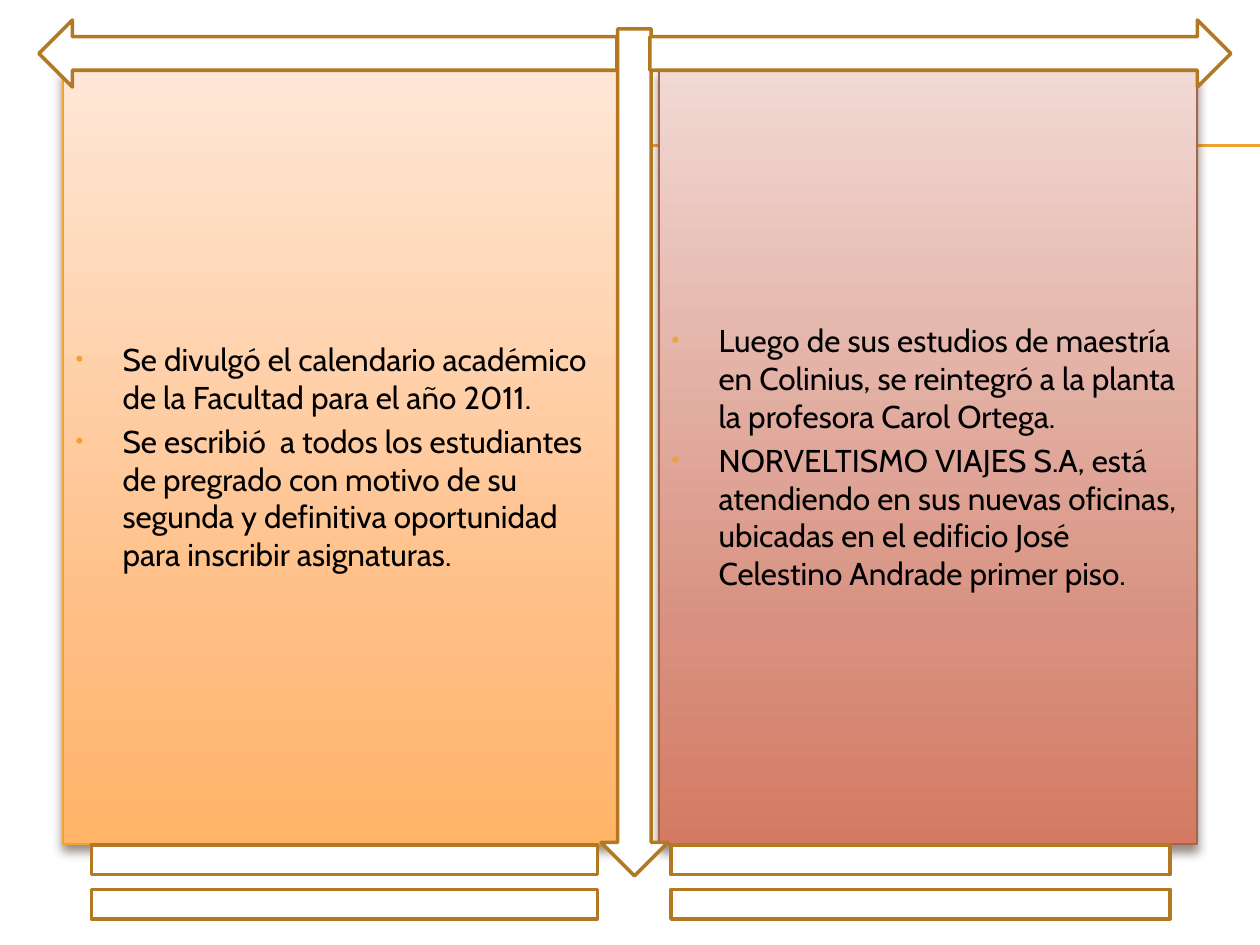
from copy import deepcopy

from lxml import etree
from pptx import Presentation
from pptx import util as u
from pptx.dml.color import RGBColor
from pptx.enum import shapes, text
from pptx.oxml import ns

GOLD = RGBColor(0xF0, 0xA2, 0x2E)
BROWN = RGBColor(0xB2, 0x78, 0x22)
RUST = RGBColor(0xA5, 0x64, 0x4E)
SHADE = RGBColor(0x4E, 0x3B, 0x30)
WHITE = RGBColor(0xFF, 0xFF, 0xFF)
BLACK = RGBColor(0, 0, 0)
PEACH = [RGBColor(0xFF, 0xE7, 0xD7), RGBColor(0xFF, 0xBE, 0x84), RGBColor(0xFF, 0xB4, 0x68)]
ROSE = [RGBColor(0xF1, 0xD9, 0xD4), RGBColor(0xD8, 0x91, 0x80), RGBColor(0xD4, 0x7A, 0x62)]
STOPS = [0, 0.72, 1]
PX = u.Inches(1) / 126


def add(root, tag, **attrs):
    """Append a DrawingML element."""
    node = etree.SubElement(root, ns.qn("a:" + tag))
    for key, val in attrs.items():
        node.set(key, str(val))
    return node


def write(para, words, size=18, font="Cabin", color=BLACK, dent=47, bullet=GOLD):
    """Fill a bulleted paragraph."""
    run = para.add_run()
    run.text = words
    run.font.size = u.Pt(size)
    run.font.name = font
    run.font.color.rgb = color
    para.alignment = text.PP_ALIGN.LEFT
    para.space_before = u.Pt(size * 0.2)
    props = para._p.get_or_add_pPr()
    props.set("marL", str(int(dent * PX)))
    props.set("indent", str(-int(dent * PX)))
    add(add(props, "buClr"), "srgbClr", val=bullet)
    add(props, "buSzPct", val=70000)
    add(props, "buFont", typeface="Arial")
    add(props, "buChar", char="•")


deck = Presentation()
deck.slide_width, deck.slide_height = u.Inches(10), u.Inches(7.5)
slide = deck.slides.add_slide(deck.slide_layouts[3])  # two content
title = slide.shapes.title
title.element.getparent().remove(title.element)
tree = slide.shapes

# Double rule, behind the panels
for row, y in enumerate([145, 146]):
    rule = tree.add_connector(shapes.MSO_CONNECTOR.STRAIGHT,
                              *[int(n * PX) for n in (71, y, 1260, y)])
    rule.line.color.rgb = GOLD
    rule.line.width = u.Pt(0.75)
    add(rule._element.spPr, "effectLst")
    tree._spTree.insert(2 + row, rule._element)

# News panels
panels = [
    (63, 557, PEACH, GOLD, [
        "Se divulgó el calendario académico de la Facultad para el año 2011.",
        "Se escribió  a todos los estudiantes de pregrado con motivo de su segunda "
        "y definitiva oportunidad para inscribir asignaturas."]),
    (659, 538, ROSE, RUST, [
        "Luego de sus estudios de maestría en Colinius, se reintegró a la planta "
        "la profesora Carol Ortega.",
        "NORVELTISMO VIAJES S.A, está atendiendo en sus nuevas oficinas, ubicadas "
        "en el edificio José Celestino Andrade primer piso."]),
]
for body, (x, wide, tints, edge, news) in zip(list(slide.placeholders), panels):
    body.left, body.top, body.width, body.height = [int(n * PX) for n in (x, 69, wide, 775)]
    fill = body.fill
    fill.gradient()
    fill.gradient_angle = 270
    props = body._element.spPr
    stops = props.find(".//" + ns.qn("a:gsLst"))
    stops.append(deepcopy(stops[0]))
    for stop, place, tint in zip(fill.gradient_stops, STOPS, tints):
        stop.position = place
        stop.color.rgb = tint
    body.line.color.rgb = edge
    body.line.width = u.Pt(0.79)

    # Soft shadow below
    body.shadow.inherit = False
    glow = add(props.find(ns.qn("a:effectLst")), "outerShdw", blurRad=u.Pt(6),
               dist=u.Pt(4), dir=5400000, rotWithShape=0)
    add(add(glow, "srgbClr", val=SHADE), "alpha", val=60000)

    frame = body.text_frame
    frame.word_wrap = True
    frame.auto_size = text.MSO_AUTO_SIZE.NONE
    frame.vertical_anchor = text.MSO_ANCHOR.MIDDLE
    for i, item in enumerate(news):
        write(frame.add_paragraph() if i else frame.paragraphs[0], item)

# Arrows and double bars
KIND = shapes.MSO_SHAPE
for kind, *box in [
    (KIND.DOWN_ARROW, 601, 29, 67, 847),
    (KIND.RIGHT_ARROW, 650, 20, 581, 67),
    (KIND.LEFT_ARROW, 39, 20, 578, 67),
    (KIND.MATH_EQUAL, 0, 819, 689, 126),
    (KIND.MATH_EQUAL, 581, 819, 679, 126),
]:
    mark = tree.add_shape(kind, *[int(n * PX) for n in box])
    mark.shadow.inherit = False
    mark.fill.solid()
    mark.fill.fore_color.rgb = WHITE
    mark.line.color.rgb = BROWN
    mark.line.width = u.Pt(2)

deck.save("out.pptx")
